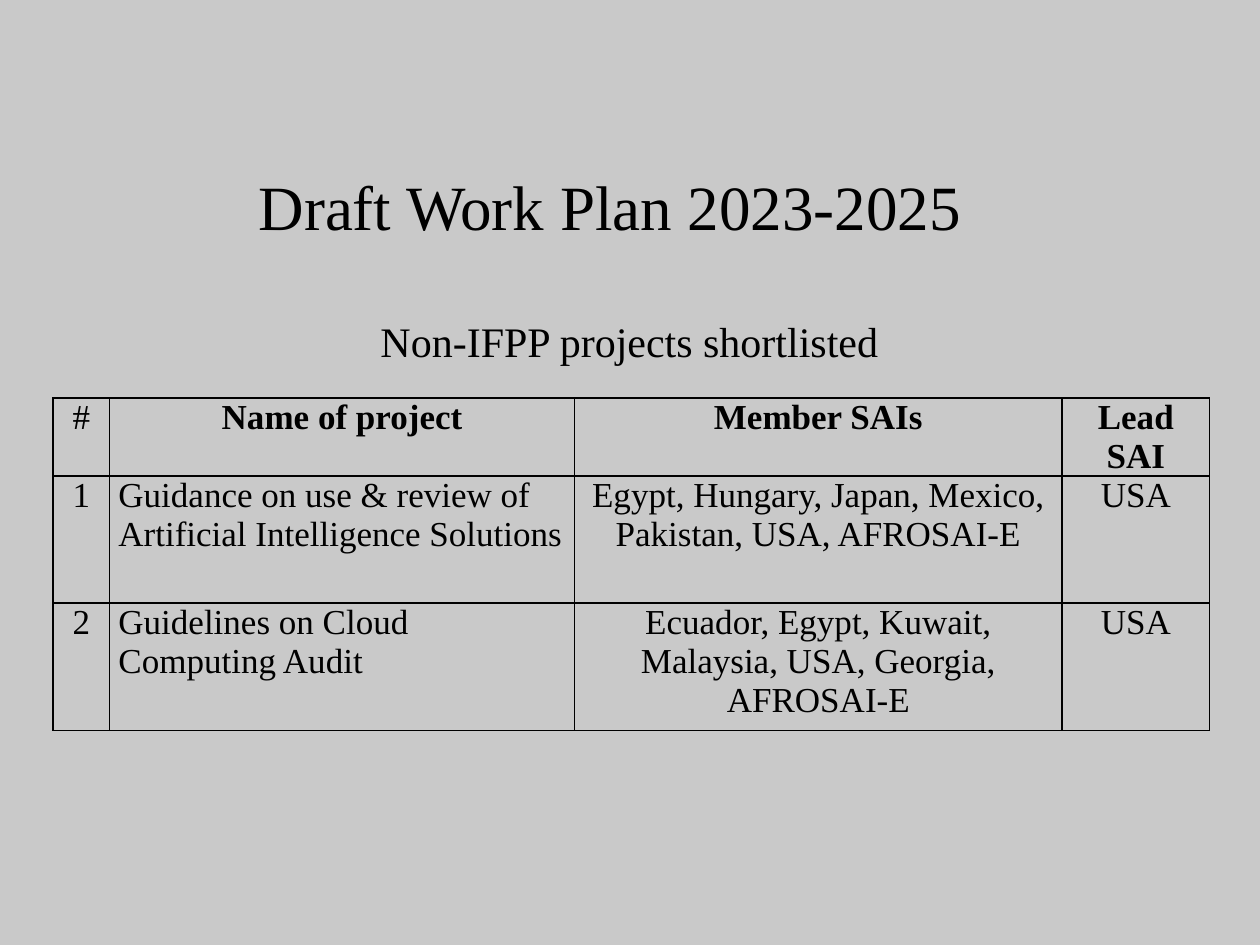
from lxml.etree import SubElement
from pptx import Presentation
from pptx.dml.color import RGBColor
from pptx.enum.text import MSO_ANCHOR, MSO_AUTO_SIZE, PP_ALIGN
from pptx.oxml import parse_xml
from pptx.oxml.ns import nsdecls, qn
from pptx.util import Inches, Pt

COLORS = {"background": "C9C9C9", "ink": "000000"}
FONT = "Times New Roman"


def write(paragraph, text, size, align=PP_ALIGN.CENTER, bold=False):
    paragraph.text = text
    paragraph.alignment = align
    paragraph.space_before = Pt(0)
    for name, value in {"name": FONT, "size": Pt(size), "bold": bold}.items():
        setattr(paragraph.runs[0].font, name, value)
    paragraph.runs[0].font.color.rgb = RGBColor.from_string(COLORS["ink"])


def add_borders(cell):
    properties = cell._tc.get_or_add_tcPr()
    for position, side in enumerate(("lnL", "lnR", "lnT", "lnB")):
        properties.insert(position, parse_xml(
            f'<a:{side} {nsdecls("a")} w="{Pt(1)}"><a:solidFill>'
            f'<a:srgbClr val="{COLORS["ink"]}"/></a:solidFill></a:{side}>'))


prs = Presentation()
prs.slide_width, prs.slide_height = Inches(10), Inches(7.5)
slide = prs.slides.add_slide(prs.slide_layouts[1])
slide.background.fill.solid()
slide.background.fill.fore_color.rgb = RGBColor.from_string(COLORS["background"])

# Title and subtitle
title, subtitle = slide.shapes.title, slide.placeholders[1]
headings = [
    (title, "Draft Work Plan 2023-2025", 36, MSO_ANCHOR.MIDDLE, (0.53, 1.24, 8.62, 0.85)),
    (subtitle, "Non-IFPP projects shortlisted", 24, MSO_ANCHOR.TOP, (0.83, 2.5, 8.33, 5)),
]
for heading, text, size, anchor, box in headings:
    for side, length in zip(("left", "top", "width", "height"), box):
        setattr(heading, side, Inches(length))
    frame = heading.text_frame
    frame.auto_size = MSO_AUTO_SIZE.NONE
    frame.vertical_anchor = anchor
    line = frame.paragraphs[0]
    write(line, text, size)
    line.line_spacing = 0.9

bullet_format = subtitle.text_frame.paragraphs[0]._p.get_or_add_pPr()
bullet_format.set("marL", "0")
bullet_format.set("indent", "0")
SubElement(bullet_format, qn("a:buNone"))

# Project table
projects = [
    ("#", "Name of project", "Member SAIs", "Lead SAI"),
    ("1", "Guidance on use & review of Artificial Intelligence Solutions",
     "Egypt, Hungary, Japan, Mexico, Pakistan, USA, AFROSAI-E", "USA"),
    ("2", "Guidelines on Cloud Computing Audit",
     "Ecuador, Egypt, Kuwait, Malaysia, USA, Georgia, AFROSAI-E", "USA"),
]
column_widths = (0.45, 3.69, 3.87, 1.17)
row_heights = (0.58, 1.01, 1.01)
cell_margins = {"margin_left": 0.07, "margin_right": 0.07, "margin_top": 0, "margin_bottom": 0}

table = slide.shapes.add_table(
    len(projects), len(column_widths), Inches(0.42), Inches(3.16),
    Inches(sum(column_widths)), Inches(sum(row_heights))).table
table.first_row = table.horz_banding = False
for column, width in zip(table.columns, column_widths):
    column.width = Inches(width)
for row, height in zip(table.rows, row_heights):
    row.height = Inches(height)

for r, project in enumerate(projects):
    for c, text in enumerate(project):
        cell = table.cell(r, c)
        for margin, length in cell_margins.items():
            setattr(cell, margin, Inches(length))
        cell.fill.background()
        add_borders(cell)
        is_project_name = r > 0 and c == 1
        write(cell.text_frame.paragraphs[0], text, 20,
              align=PP_ALIGN.LEFT if is_project_name else PP_ALIGN.CENTER,
              bold=r == 0 and c > 0)

prs.save("out.pptx")
